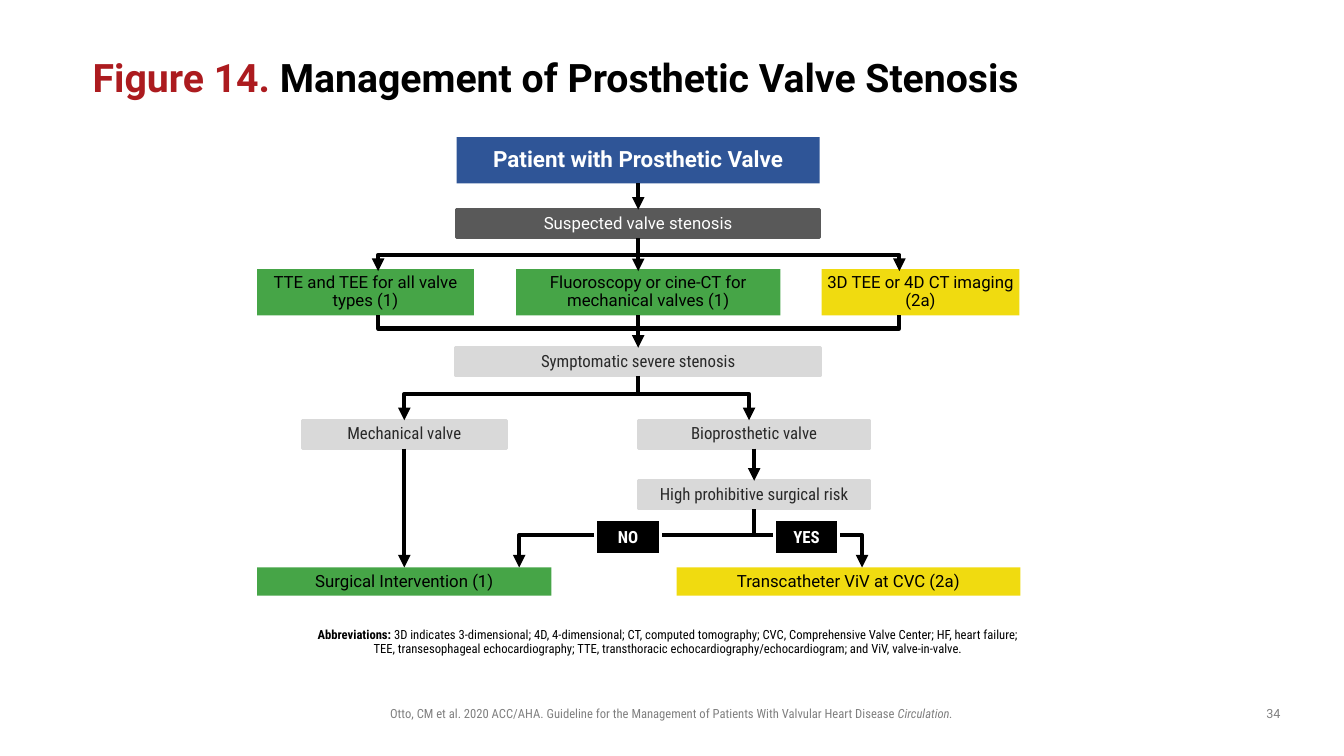
from lxml import etree
from pptx import Presentation
from pptx import util as u
from pptx.dml.color import RGBColor
from pptx.enum import shapes, text
from pptx.oxml.ns import qn

PX = 9144  # EMU per px, 100 px to the inch
COLORS = {
    "red": "AC1B1F", "black": "000000", "white": "FFFFFF", "muted": "808080",
    "blue": "2F5597", "green": "46A547", "yellow": "F0DB10",
    "dark": "595959", "light": "D9D9D9", "ink": "292929",
}
MAIN, NARROW = "Roboto", "Roboto Condensed"
# fill, outline, text colour, font, size, bold, line spacing
BOX_STYLES = {
    "start": ("blue", None, "white", MAIN, 16, True, 0.9),
    "finding": ("dark", "dark", "white", MAIN, 12, False, 0.9),
    "class 1": ("green", None, "black", MAIN, 12, False, 0.9),
    "class 2a": ("yellow", None, "black", MAIN, 12, False, 0.9),
    "state": ("light", "light", "ink", NARROW, 12, False, 0.9),
    "answer": ("black", "white", "white", NARROW, 12, True, 1.0),
}
TOP, BOTTOM = 0, 2


def color(name):
    return RGBColor.from_string(COLORS[name])


class FlowSlide:
    def __init__(self, deck):
        self.shapes = deck.slides.add_slide(deck.slide_layouts[6]).shapes

    def set_text(self, frame, spans, font, size, align, margins, anchor, spacing=1.0):
        """Fill a text frame with one paragraph of (text, colour, bold, italic) spans."""
        frame.word_wrap = True
        frame.vertical_anchor = anchor
        (frame.margin_left, frame.margin_top,
         frame.margin_right, frame.margin_bottom) = (m * PX for m in margins)
        para = frame.paragraphs[0]
        para.alignment = align
        para.line_spacing = spacing
        for words, ink, bold, italic in spans:
            span = para.add_run()
            span.text = words
            span.font.name, span.font.size = font, u.Pt(size)
            span.font.bold, span.font.italic = bold, italic
            span.font.color.rgb = color(ink)

    def label(self, at, spans, font, size, align=text.PP_ALIGN.CENTER,
              margins=(10, 5, 10, 5), anchor=text.MSO_ANCHOR.TOP, spacing=1.0):
        frame = self.shapes.add_textbox(*(n * PX for n in at)).text_frame
        self.set_text(frame, spans, font, size, align, margins, anchor, spacing)

    def box(self, style, words, *at):
        fill, outline, ink, font, size, bold, spacing = BOX_STYLES[style]
        box = self.shapes.add_shape(shapes.MSO_SHAPE.RECTANGLE, *(n * PX for n in at))
        box.shadow.inherit = False
        box.fill.solid()
        box.fill.fore_color.rgb = color(fill)
        if outline:
            box.line.color.rgb = color(outline)
            box.line.width = u.Pt(2)
        else:
            box.line.fill.background()
        self.set_text(box.text_frame, [(words, ink, bold, False)], font, size,
                      text.PP_ALIGN.CENTER, (0, 0, 0, 0), text.MSO_ANCHOR.MIDDLE, spacing)
        return box

    def stroke(self, line_shape, arrow):
        line_shape.line.color.rgb = color("black")
        line_shape.line.width = u.Pt(3)
        if arrow:
            outline = line_shape.element.spPr.find(qn("a:ln"))
            etree.SubElement(outline, qn("a:tailEnd"), type="triangle")

    def straight(self, x, top, bottom, start=None, end=None, arrow=True):
        """Draw a vertical line, joined to the boxes it leaves and reaches."""
        line = self.shapes.add_connector(
            shapes.MSO_CONNECTOR.STRAIGHT, x * PX, top * PX, x * PX, bottom * PX)
        if start is not None:
            line.begin_connect(start, BOTTOM)
        if end is not None:
            line.end_connect(end, TOP)
        self.stroke(line, arrow)
        etree.SubElement(line.element.spPr, qn("a:effectLst"))

    def elbow(self, *points, arrow=True):
        (x, y), *rest = points
        builder = self.shapes.build_freeform(x, y, scale=PX)
        builder.add_line_segments(rest, close=False)
        bend = builder.convert_to_shape()
        bend.shadow.inherit = False
        bend.fill.background()
        self.stroke(bend, arrow)


def main():
    deck = Presentation()
    deck.slide_width, deck.slide_height = 1333 * PX, 750 * PX
    slide = FlowSlide(deck)

    # Title
    slide.label((92, 40, 1150, 72),
                [("Figure 14. ", "red", True, False),
                 ("Management of Prosthetic Valve Stenosis", "black", True, False)],
                MAIN, 28, text.PP_ALIGN.LEFT, (0, 0, 0, 0), text.MSO_ANCHOR.MIDDLE)

    # Boxes, from top to bottom
    patient = slide.box("start", "Patient with Prosthetic Valve", 453, 136, 360, 46)
    suspected = slide.box("finding", "Suspected valve stenosis", 453, 208, 360, 28)
    slide.box("class 1", "TTE and TEE for all valve types (1)", 255, 267, 215, 46)
    slide.box("class 1", "Fluoroscopy or cine-CT for mechanical valves (1)", 512, 267, 262, 46)
    slide.box("class 2a", "3D TEE or 4D CT imaging (2a)", 815, 267, 196, 46)
    severe = slide.box("state", "Symptomatic severe stenosis", 452, 345, 362, 28)
    mechanical = slide.box("state", "Mechanical valve", 300, 417, 202, 28)
    bioprosthetic = slide.box("state", "Bioprosthetic valve", 633, 417, 230, 28)
    risk = slide.box("state", "High prohibitive surgical risk", 633, 477, 230, 28)
    surgery = slide.box("class 1", "Surgical Intervention (1)", 255, 563, 292, 28)
    slide.box("class 2a", "Transcatheter ViV at CVC (2a)", 671, 563, 341, 28)

    # Vertical lines
    trunk, risk_x = 633, 748
    slide.straight(trunk, 182, 208, patient, suspected)
    slide.straight(trunk, 236, 269, suspected)
    slide.straight(trunk, 313, 345, end=severe)
    slide.straight(trunk, 373, 391, severe, arrow=False)
    slide.straight(401, 445, 563, mechanical, surgery)
    slide.straight(risk_x, 445, 477, bioprosthetic, risk)
    slide.straight(risk_x, 505, 531, risk, arrow=False)

    # Branches to and from the imaging tests
    for x in (375, 892):
        slide.elbow((trunk, 253), (x, 253), (x, 269))
        slide.elbow((x, 313), (x, 326), (trunk, 326), arrow=False)

    # Branches by valve type and by surgical risk
    for start_x, y, end_x, tip in ((trunk, 391, 401, 417), (trunk, 391, 743, 417),
                                   (risk_x, 531, 515, 563), (risk_x, 531, 855, 563)):
        slide.elbow((start_x, y), (end_x, y), (end_x, tip))

    # Answers on the risk branches
    for words, left in (("NO", 591), ("YES", 768)):
        slide.box("answer", words, left, 516, 64, 34)

    # Abbreviations, citation and page number
    slide.label((306, 619, 722, 30),
                [("Abbreviations: ", "black", True, False),
                 ("3D indicates 3-dimensional; 4D, 4-dimensional; CT, computed tomography; "
                  "CVC, Comprehensive Valve Center; HF, heart failure; TEE, transesophageal "
                  "echocardiography; TTE, transthoracic echocardiography/echocardiogram; "
                  "and ViV, valve-in-valve.", "black", False, False)],
                NARROW, 9, margins=(0, 5, 10, 5), spacing=0.9)
    slide.label((317, 695, 698, 25),
                [("Otto, CM et al. 2020 ACC/AHA. Guideline for the Management of Patients "
                  "With Valvular Heart Disease ", "muted", False, False),
                 ("Circulation.", "muted", False, True)], NARROW, 9)
    slide.label((1242, 695, 42, 26), [("34", "muted", False, False)], MAIN, 9)

    deck.save("out.pptx")


if __name__ == "__main__":
    main()
